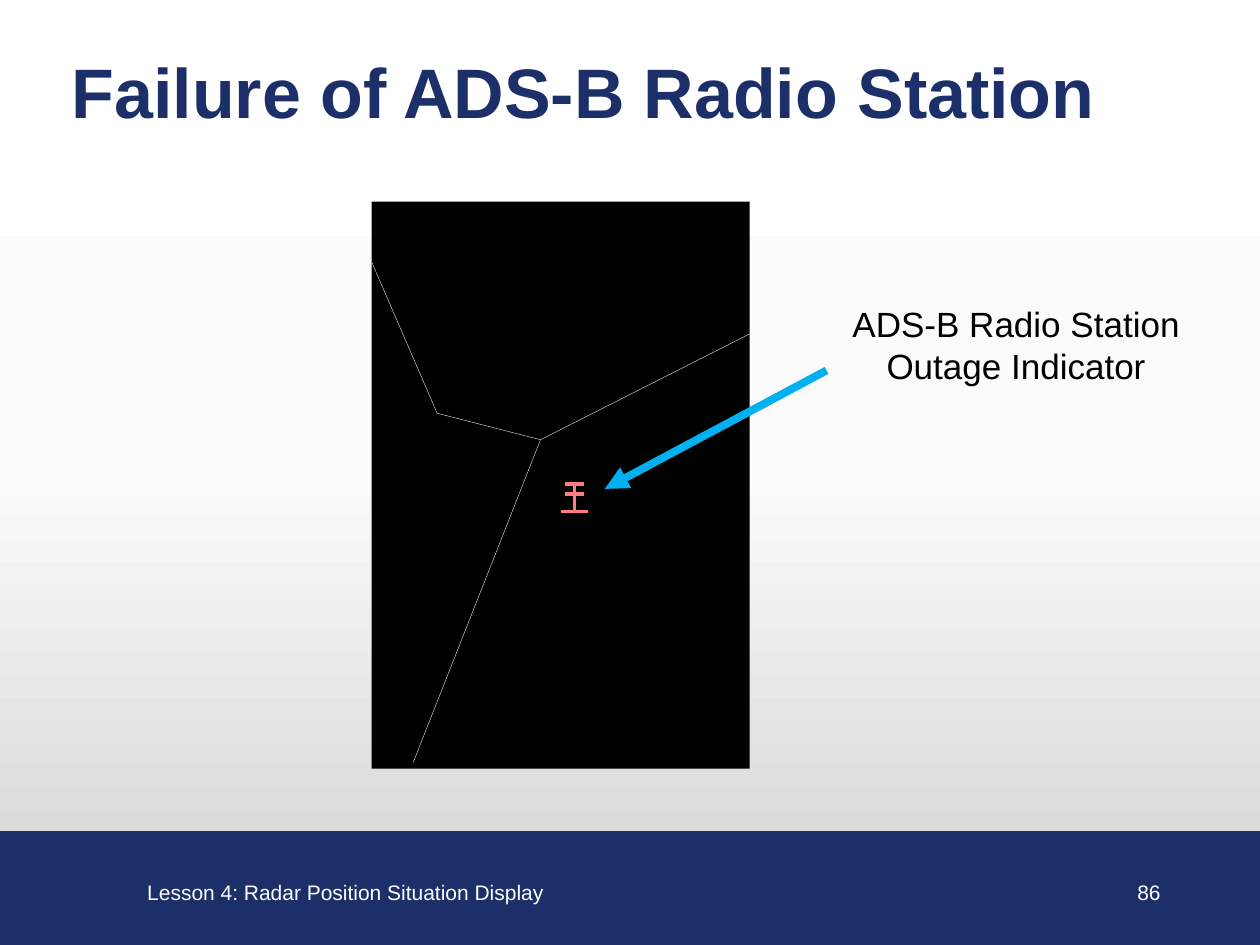
from lxml import etree
from pptx import Presentation
from pptx.dml.color import RGBColor
from pptx.enum.shapes import MSO_CONNECTOR, MSO_SHAPE
from pptx.enum.text import MSO_ANCHOR, MSO_AUTO_SIZE, PP_ALIGN
from pptx.oxml import parse_xml
from pptx.oxml.ns import nsdecls, qn
from pptx.util import Inches, Pt

LEFT, CENTER, RIGHT = PP_ALIGN.LEFT, PP_ALIGN.CENTER, PP_ALIGN.RIGHT
TOP, MIDDLE = MSO_ANCHOR.TOP, MSO_ANCHOR.MIDDLE
RECTANGLE = MSO_SHAPE.RECTANGLE
STRAIGHT = MSO_CONNECTOR.STRAIGHT

FONT = "Arial"
COLORS = {
    "navy": "1D2F68",
    "white": "FFFFFF",
    "black": "000000",
    "boundary": "D9D9D9",
    "outage": "FF7C80",
    "pointer": "00B0F0",
}
BACKGROUND_STOPS = [(0, "FFFFFF"), (50, "FBFBFB"), (100, "D0D0D0")]

SECTOR_JUNCTION = (4.29, 3.49)
WEST_BEND = (3.47, 3.28)
SECTOR_BOUNDARIES = [
    ((5.95, 2.65), SECTOR_JUNCTION),
    (SECTOR_JUNCTION, WEST_BEND),
    (WEST_BEND, (2.95, 2.08)),
    (SECTOR_JUNCTION, (3.28, 6.05)),
]
MAST_X = 4.56
MAST_TOP, MAST_BOTTOM = 3.85, 4.07
# Height and half-width of each bar across the mast
MAST_BARS = [(4.06, 0.11), (3.92, 0.075), (3.84, 0.075)]


def color(name):
    return RGBColor.from_string(COLORS[name])


def set_background(slide):
    stops = "".join(
        f'<a:gs pos="{percent * 1000}"><a:srgbClr val="{value}"/></a:gs>'
        for percent, value in BACKGROUND_STOPS
    )
    background = parse_xml(
        f'<p:bg {nsdecls("p", "a")}><p:bgPr><a:gradFill rotWithShape="1">'
        f'<a:gsLst>{stops}</a:gsLst><a:lin ang="5400000" scaled="0"/>'
        "</a:gradFill><a:effectLst/></p:bgPr></p:bg>"
    )
    slide.element.cSld.insert(0, background)


def place(shape, left, top, width, height):
    shape.left, shape.top = Inches(left), Inches(top)
    shape.width, shape.height = Inches(width), Inches(height)


def write_text(shape, text, *, size, fill, bold=False, align=LEFT,
               anchor=TOP, fit=MSO_AUTO_SIZE.NONE):
    frame = shape.text_frame
    frame.text = text
    frame.word_wrap = True
    frame.auto_size = fit
    frame.vertical_anchor = anchor
    paragraph = frame.paragraphs[0]
    paragraph.alignment = align
    font = paragraph.runs[0].font
    font.name, font.size, font.bold = FONT, Pt(size), bold
    font.color.rgb = color(fill)


def add_label(slide, box, text, **text_format):
    label = slide.shapes.add_textbox(*map(Inches, box))
    write_text(label, text, **text_format)


def add_panel(slide, box, fill, outlined=False):
    panel = slide.shapes.add_shape(RECTANGLE, *map(Inches, box))
    panel.shadow.inherit = False
    panel.fill.solid()
    panel.fill.fore_color.rgb = color(fill)
    if outlined:
        panel.line.color.rgb = color(fill)
        panel.line.width = Pt(0.75)
    else:
        panel.line.fill.background()


def add_line(slide, start, end, stroke, width, arrow=False):
    line = slide.shapes.add_connector(STRAIGHT, *map(Inches, start + end))
    line.line.color.rgb = color(stroke)
    line.line.width = Pt(width)
    if arrow:
        etree.SubElement(line.line._get_or_add_ln(), qn("a:tailEnd"),
                         type="triangle")
    etree.SubElement(line._element.spPr, qn("a:effectLst"))


def add_footer(slide):
    add_panel(slide, (-0.02, 6.6, 10.02, 0.9), "navy", outlined=True)
    add_label(slide, (1.07, 6.93, 4.32, 0.3),
              "Lesson 4: Radar Position Situation Display",
              size=12, fill="white", fit=MSO_AUTO_SIZE.SHAPE_TO_FIT_TEXT)
    add_label(slide, (8.69, 6.93, 0.62, 0.3), "86",
              size=12, fill="white", align=RIGHT, anchor=MIDDLE)


def add_title(slide):
    title = slide.shapes.title
    place(title, 0.47, 0.38, 9.27, 0.67)
    write_text(title, "Failure of ADS-B Radio Station",
               size=40, fill="navy", bold=True, anchor=MIDDLE)


def add_radar_display(slide):
    add_panel(slide, (2.95, 1.6, 3, 4.5), "black")
    for start, end in SECTOR_BOUNDARIES:
        add_line(slide, start, end, "boundary", 0.25)


def add_outage_symbol(slide):
    add_line(slide, (MAST_X, MAST_TOP), (MAST_X, MAST_BOTTOM), "outage", 2)
    for y, reach in MAST_BARS:
        add_line(slide, (MAST_X + reach, y), (MAST_X - reach, y), "outage", 2)


def add_callout(slide):
    add_label(slide, (6.61, 2.35, 2.91, 0.77),
              "ADS-B Radio Station Outage Indicator",
              size=20, fill="black", align=CENTER,
              fit=MSO_AUTO_SIZE.SHAPE_TO_FIT_TEXT)
    add_line(slide, (6.56, 2.94), (4.8, 3.88), "pointer", 4.5, arrow=True)


def main():
    presentation = Presentation()
    presentation.slide_width = Inches(10)
    presentation.slide_height = Inches(7.5)
    slide = presentation.slides.add_slide(presentation.slide_layouts[5])
    set_background(slide)
    add_footer(slide)
    add_title(slide)
    add_radar_display(slide)
    add_outage_symbol(slide)
    add_callout(slide)
    presentation.save("out.pptx")


if __name__ == "__main__":
    main()
